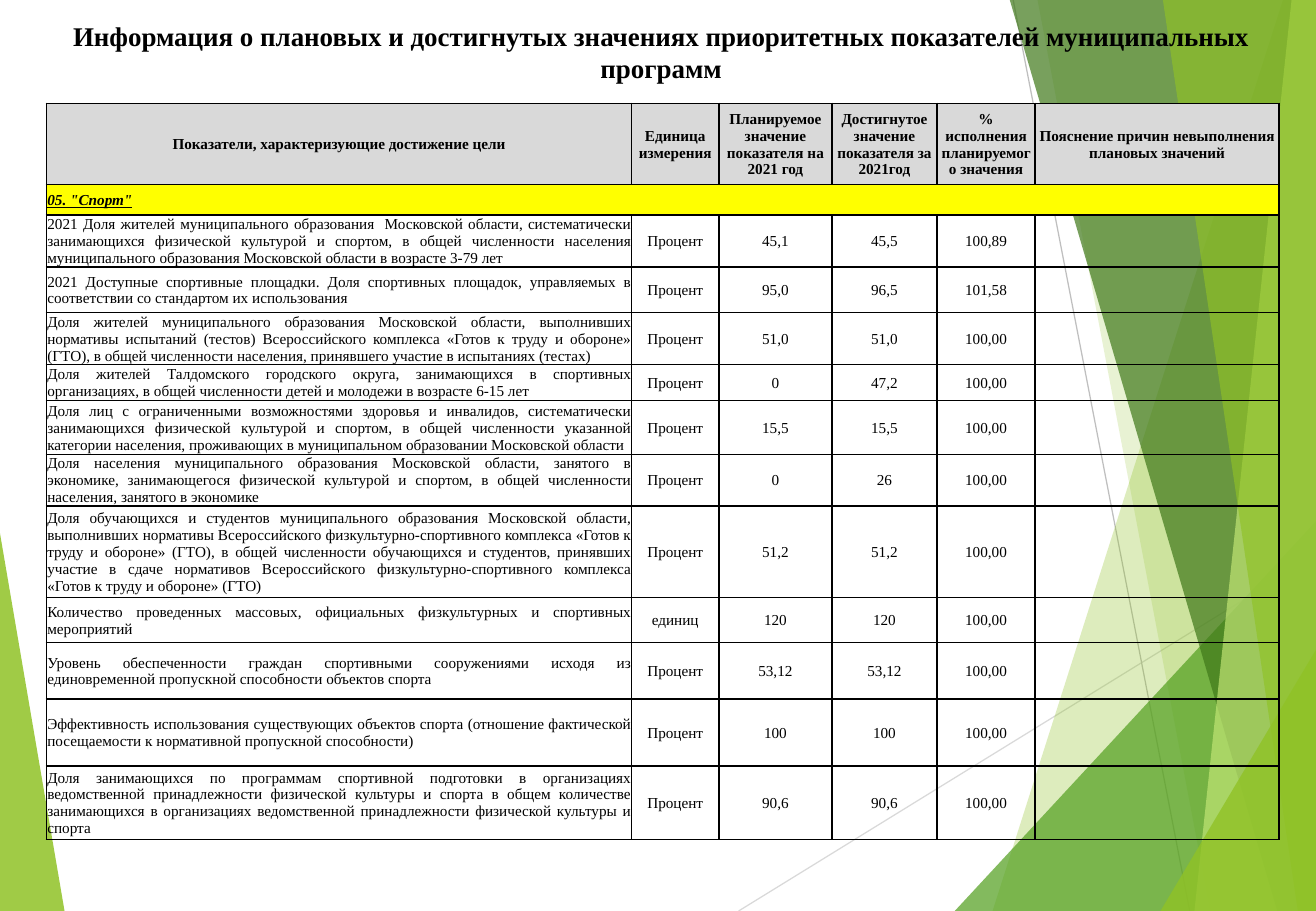
from dataclasses import dataclass

from lxml.etree import SubElement
from pptx import Presentation
from pptx.dml.color import RGBColor
from pptx.enum.shapes import MSO_CONNECTOR as Connector
from pptx.enum.text import MSO_ANCHOR as Anchor, MSO_AUTO_SIZE as AutoSize, PP_ALIGN as Align
from pptx.oxml.ns import qn
from pptx.util import Cm, Pt


@dataclass(frozen=True)
class Theme:
    font: str = "Times New Roman"
    title_size: int = 16
    table_size: int = 9
    text: str = "000000"
    header: str = "D9D9D9"
    section: str = "FFFF00"
    lime: str = "90C226"
    green: str = "54A021"
    dark_green: str = "3F7819"
    pale_green: str = "C0E474"
    light_line: str = "D9D9D9"
    grey_line: str = "BFBFBF"


@dataclass(frozen=True)
class Box:
    left: float
    top: float
    width: float
    height: float


THEME = Theme()
SLIDE = Box(0, 0, 27.51, 19.05)
TITLE = Box(0.41, 0.18, 26.82, 1.8)
TABLE = Box(0.97, 2.16, 25.77, 15.39)
NO_STYLE_TABLE = "{2D5ABB26-0587-4C30-8999-92F81FD0307C}"

COLUMN_WIDTHS = [12.23, 1.83, 2.36, 2.2, 2.05, 5.1]
ROW_HEIGHTS = [1.7, 0.64, 1.08, 0.96, 1.08, 0.76, 1.12, 1.08, 1.92, 0.94, 1.18, 1.4, 1.53]
HEADERS = [
    "Показатели, характеризующие достижение цели",
    "Единица измерения",
    "Планируемое значение показателя на 2021 год",
    "Достигнутое значение показателя за 2021год",
    "% исполнения планируемого значения",
    "Пояснение причин невыполнения плановых значений",
]
SECTION = '05. "Спорт"'
INDICATORS = [
    ("2021 Доля жителей муниципального образования  Московской области, систематически "
     "занимающихся физической культурой и спортом, в общей численности населения "
     "муниципального образования Московской области в возрасте 3-79 лет",
     "Процент", "45,1", "45,5", "100,89", ""),
    ("2021 Доступные спортивные площадки. Доля спортивных площадок, управляемых в "
     "соответствии со стандартом их использования",
     "Процент", "95,0", "96,5", "101,58", ""),
    ("Доля жителей муниципального образования Московской области, выполнивших нормативы "
     "испытаний (тестов) Всероссийского комплекса «Готов к труду и обороне» (ГТО), в общей "
     "численности населения, принявшего участие в испытаниях (тестах)",
     "Процент", "51,0", "51,0", "100,00", ""),
    ("Доля жителей Талдомского городского округа, занимающихся в спортивных организациях, "
     "в общей численности детей и молодежи в возрасте 6-15 лет",
     "Процент", "0", "47,2", "100,00", ""),
    ("Доля лиц с ограниченными возможностями здоровья и инвалидов, систематически "
     "занимающихся физической культурой и спортом, в общей численности указанной категории "
     "населения, проживающих в муниципальном образовании Московской области",
     "Процент", "15,5", "15,5", "100,00", ""),
    ("Доля населения муниципального образования Московской области, занятого в экономике, "
     "занимающегося физической культурой и спортом, в общей численности населения, "
     "занятого в экономике",
     "Процент", "0", "26", "100,00", ""),
    ("Доля обучающихся и студентов муниципального образования Московской области, "
     "выполнивших нормативы Всероссийского физкультурно-спортивного комплекса «Готов к "
     "труду и обороне» (ГТО), в общей численности обучающихся и студентов, принявших "
     "участие в сдаче нормативов Всероссийского физкультурно-спортивного комплекса "
     "«Готов к труду и обороне» (ГТО)",
     "Процент", "51,2", "51,2", "100,00", ""),
    ("Количество проведенных массовых, официальных физкультурных и спортивных мероприятий",
     "единиц", "120", "120", "100,00", ""),
    ("Уровень обеспеченности граждан спортивными сооружениями исходя из единовременной "
     "пропускной способности объектов спорта",
     "Процент", "53,12", "53,12", "100,00", ""),
    ("Эффективность использования существующих объектов спорта (отношение фактической "
     "посещаемости к нормативной пропускной способности)",
     "Процент", "100", "100", "100,00", ""),
    ("Доля занимающихся по программам спортивной подготовки в организациях ведомственной "
     "принадлежности физической культуры и спорта в общем количестве занимающихся в "
     "организациях ведомственной принадлежности физической культуры и спорта",
     "Процент", "90,6", "90,6", "100,00", ""),
]


def rgb(color):
    return RGBColor.from_string(color)


def format_paragraph(paragraph, size, align, bold=False):
    paragraph.alignment = align
    font = paragraph.font
    font.name, font.size, font.bold = THEME.font, Pt(size), bold
    font.color.rgb = rgb(THEME.text)


def add_facet(slide, box, points, color, opacity):
    corners = [(Cm(box.left + x), Cm(box.top + y)) for x, y in points]
    builder = slide.shapes.build_freeform(*corners[0])
    builder.add_line_segments(corners[1:])
    shape = builder.convert_to_shape()
    shape.shadow.inherit = False
    shape.fill.solid()
    shape.fill.fore_color.rgb = rgb(color)
    shape.line.fill.background()
    fill_color = shape.fill._xPr.find(qn("a:solidFill"))[0]
    SubElement(fill_color, qn("a:alpha")).set("val", str(opacity * 1000))


def add_ray(slide, box, start, end, color):
    ends = [Cm(value) for x, y in (start, end) for value in (box.left + x, box.top + y)]
    connector = slide.shapes.add_connector(Connector.STRAIGHT, *ends)
    connector.line.color.rgb = rgb(color)
    connector.line.width = Pt(0.75)
    SubElement(connector._element.spPr, qn("a:effectLst"))


def add_background(slide, box):
    right, bottom = box.width, box.height

    def panel(top_x, bottom_x):
        return [(top_x, 0), (bottom_x, bottom), (right, bottom), (right, 0)]

    def wedge(left_x, right_y):
        return [(left_x, bottom), (right, right_y), (right, bottom)]

    add_facet(slide, box, [(0, 11.15), (1.35, bottom), (0, bottom)], THEME.lime, 85)
    add_ray(slide, box, (15.44, bottom), (right, 11.61), THEME.light_line)
    add_ray(slide, box, (21.18, 0), (24.87, bottom), THEME.grey_line)
    for points, color, opacity in (
        (panel(26.82, 20.75), THEME.lime, 30),
        (panel(21.69, 25.3), THEME.lime, 20),
        (wedge(19.96, 10.9), THEME.green, 72),
        (panel(21.11, 26.7), THEME.dark_green, 70),
        (panel(27, 24.97), THEME.pale_green, 70),
        (panel(24.31, 27.13), THEME.lime, 65),
        (wedge(24.26, 13.59), THEME.lime, 80),
    ):
        add_facet(slide, box, points, color, opacity)


def add_title(slide, box, text):
    title = slide.shapes.title
    title.left, title.top = Cm(box.left), Cm(box.top)
    title.width, title.height = Cm(box.width), Cm(box.height)
    frame = title.text_frame
    frame.text = text
    frame.word_wrap = True
    frame.auto_size = AutoSize.NONE
    frame.vertical_anchor = Anchor.MIDDLE
    frame.margin_left = frame.margin_right = frame.margin_top = frame.margin_bottom = 0
    format_paragraph(frame.paragraphs[0], THEME.title_size, Align.CENTER, True)
    frame.paragraphs[0].space_after = Pt(6.3)
    slide.shapes._spTree.append(title._element)


def format_cell(cell, text, align, bold, fill):
    cell.text = text
    cell.vertical_anchor = Anchor.MIDDLE
    cell.margin_left = cell.margin_right = cell.margin_top = Cm(0.02)
    cell.margin_bottom = 0
    format_paragraph(cell.text_frame.paragraphs[0], THEME.table_size, align, bold)
    properties = cell._tc.get_or_add_tcPr()
    for side in ("lnL", "lnR", "lnT", "lnB"):
        border = SubElement(properties, qn(f"a:{side}"), w=str(Pt(1)))
        SubElement(SubElement(border, qn("a:solidFill")), qn("a:srgbClr"), val=THEME.text)
    if fill:
        cell.fill.solid()
        cell.fill.fore_color.rgb = rgb(fill)
    else:
        cell.fill.background()


def add_indicator_table(slide, box):
    rows = [HEADERS, [SECTION] + [""] * 5, *INDICATORS]
    frame = slide.shapes.add_table(len(rows), len(HEADERS), Cm(box.left), Cm(box.top),
                                   Cm(box.width), Cm(box.height))
    table = frame.table
    table.first_row = table.horz_banding = False
    table._tbl.tblPr.find(qn("a:tableStyleId")).text = NO_STYLE_TABLE
    for column, width in zip(table.columns, COLUMN_WIDTHS):
        column.width = Cm(box.width * width / sum(COLUMN_WIDTHS))
    for row, height in zip(table.rows, ROW_HEIGHTS):
        row.height = Cm(box.height * height / sum(ROW_HEIGHTS))
    fills = {0: THEME.header, 1: THEME.section}
    for i, values in enumerate(rows):
        for j, text in enumerate(values):
            align = Align.LEFT if i == 1 else Align.JUSTIFY if i and j == 0 else Align.CENTER
            format_cell(table.cell(i, j), text, align, i in fills, fills.get(i))
    section = table.cell(1, 0)
    section.merge(table.cell(1, len(HEADERS) - 1))
    section_font = section.text_frame.paragraphs[0].font
    section_font.italic = section_font.underline = True


def main():
    presentation = Presentation()
    presentation.slide_width, presentation.slide_height = Cm(SLIDE.width), Cm(SLIDE.height)
    slide = presentation.slides.add_slide(presentation.slide_layouts[5])
    add_background(slide, SLIDE)
    add_title(slide, TITLE, "Информация о плановых и достигнутых значениях "
                            "приоритетных показателей муниципальных программ")
    add_indicator_table(slide, TABLE)
    presentation.save("out.pptx")


if __name__ == "__main__":
    main()
